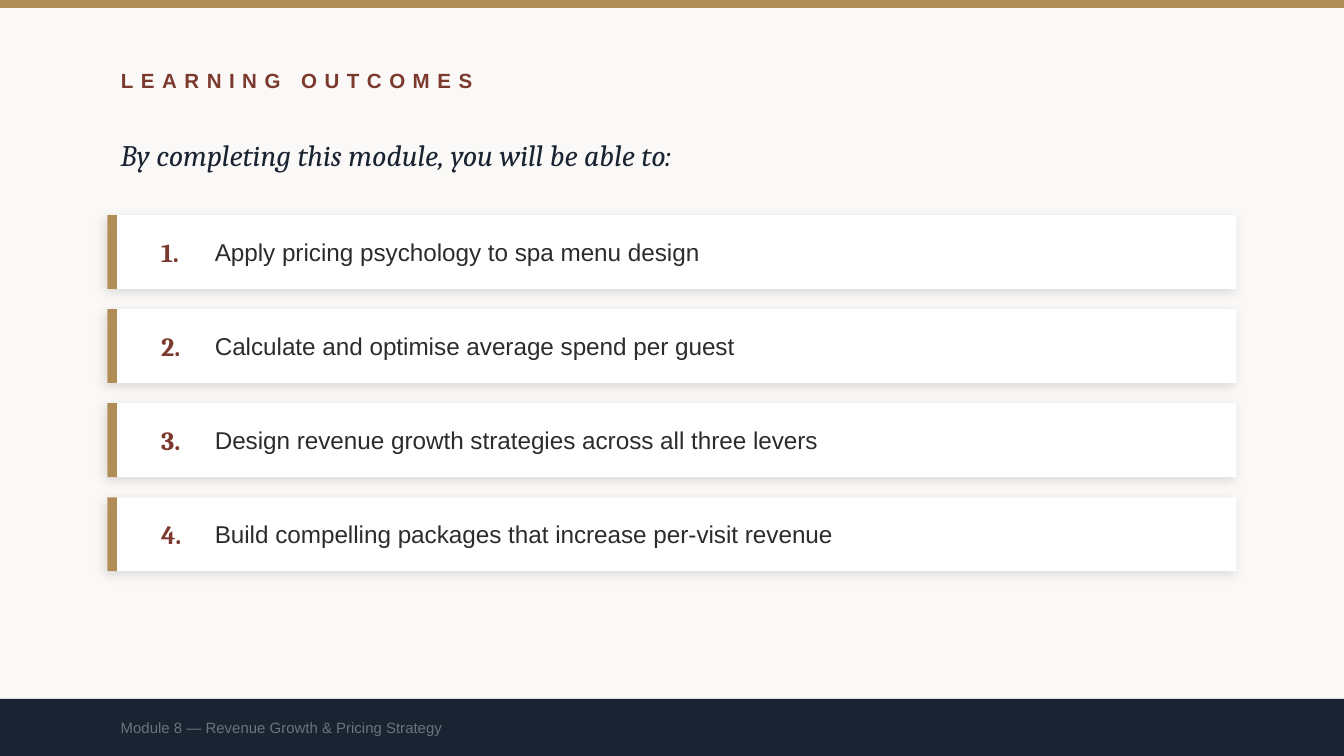
from dataclasses import dataclass

import pptx
import pptx.dml.color
import pptx.enum.shapes
import pptx.enum.text
import pptx.oxml
import pptx.oxml.ns
import pptx.util
from pptx.util import Inches


@dataclass(frozen=True)
class Theme:
    background: str = "FAF9F7"
    gold: str = "B08D57"
    rust: str = "7C3A2E"
    navy: str = "1A2332"
    white: str = "FFFFFF"
    body: str = "2C2C2C"
    muted: str = "6B7280"
    sans: str = "Arial"
    serif: str = "Cambria"
    title_size: float = 11
    intro_size: float = 16
    number_size: float = 14
    outcome_size: float = 13
    footer_size: float = 8


THEME = Theme()

OUTCOMES = [
    "Apply pricing psychology to spa menu design",
    "Calculate and optimise average spend per guest",
    "Design revenue growth strategies across all three levers",
    "Build compelling packages that increase per-visit revenue",
]
SLIDE_WIDTH = 10
SLIDE_HEIGHT = SLIDE_WIDTH * 9 / 16
MARGIN = 0.8
CARD_TOP = 1.6
CARD_HEIGHT = 0.55
CARD_PITCH = 0.7
FOOTER_TOP = 5.2
FOOTER_HEIGHT = SLIDE_HEIGHT - FOOTER_TOP


def rgb(color):
    return pptx.dml.color.RGBColor.from_string(color)


def add_bar(s, left, top, width, height, color):
    sp = s.shapes.add_shape(
        pptx.enum.shapes.MSO_SHAPE.RECTANGLE,
        Inches(left), Inches(top), Inches(width), Inches(height))
    sp.shadow.inherit = False
    sp.fill.solid()
    sp.fill.fore_color.rgb = rgb(color)
    sp.line.fill.background()
    return sp


def add_soft_shadow(sp):
    effects = sp._element.spPr.find(pptx.oxml.ns.qn("a:effectLst"))
    effects.append(pptx.oxml.parse_xml(
        f'<a:outerShdw {pptx.oxml.ns.nsdecls("a")} blurRad="{pptx.util.Pt(6)}" '
        f'dist="{pptx.util.Pt(2)}" dir="{135 * 60000}" algn="bl" rotWithShape="0">'
        '<a:srgbClr val="000000"><a:alpha val="12000"/></a:srgbClr></a:outerShdw>'))


def write_line(sp, text, size, color, font, bold=False, italic=False):
    """Put one left-aligned, vertically centred run in a shape."""
    tf = sp.text_frame
    tf.word_wrap = True
    tf.auto_size = pptx.enum.text.MSO_AUTO_SIZE.NONE
    tf.vertical_anchor = pptx.enum.text.MSO_ANCHOR.MIDDLE
    p = tf.paragraphs[0]
    p.alignment = pptx.enum.text.PP_ALIGN.LEFT
    r = p.add_run()
    r.text = text
    r.font.size = pptx.util.Pt(size)
    r.font.name = font
    r.font.bold = bold
    r.font.italic = italic
    r.font.color.rgb = rgb(color)
    return r


def add_text(s, left, top, width, height, *args, **style):
    sp = s.shapes.add_textbox(
        Inches(left), Inches(top), Inches(width), Inches(height))
    write_line(sp, *args, **style)


def add_title(s, text):
    sp = s.shapes.title
    sp.left, sp.top = Inches(MARGIN), Inches(0.4)
    sp.width, sp.height = Inches(8), Inches(0.4)
    r = write_line(sp, text, THEME.title_size, THEME.rust, THEME.sans, bold=True)
    r.font._element.set("spc", "400")


def add_outcome(s, number, text):
    top = CARD_TOP + (number - 1) * CARD_PITCH
    card = add_bar(s, MARGIN, top, 8.4, CARD_HEIGHT, THEME.white)
    add_soft_shadow(card)
    add_bar(s, MARGIN, top, 0.07, CARD_HEIGHT, THEME.gold)
    add_text(s, 1.1, top, 0.4, CARD_HEIGHT, f"{number}.",
             THEME.number_size, THEME.rust, THEME.serif, bold=True)
    add_text(s, 1.5, top, 7.4, CARD_HEIGHT, text,
             THEME.outcome_size, THEME.body, THEME.sans)


def add_footer(s, text):
    add_bar(s, 0, FOOTER_TOP, SLIDE_WIDTH, FOOTER_HEIGHT, THEME.navy)
    add_text(s, MARGIN, FOOTER_TOP, 8, FOOTER_HEIGHT, text,
             THEME.footer_size, THEME.muted, THEME.sans)


def main():
    prs = pptx.Presentation()
    prs.slide_width, prs.slide_height = Inches(SLIDE_WIDTH), Inches(SLIDE_HEIGHT)
    s = prs.slides.add_slide(prs.slide_layouts.get_by_name("Title Only"))
    s.background.fill.solid()
    s.background.fill.fore_color.rgb = rgb(THEME.background)

    add_bar(s, 0, 0, SLIDE_WIDTH, 0.06, THEME.gold)
    add_title(s, "LEARNING OUTCOMES")
    add_text(s, MARGIN, 0.9, 8, 0.5,
             "By completing this module, you will be able to:",
             THEME.intro_size, THEME.navy, THEME.serif, italic=True)
    for number, text in enumerate(OUTCOMES, start=1):
        add_outcome(s, number, text)
    add_footer(s, "Module 8 — Revenue Growth & Pricing Strategy")
    prs.save("out.pptx")


if __name__ == "__main__":
    main()
